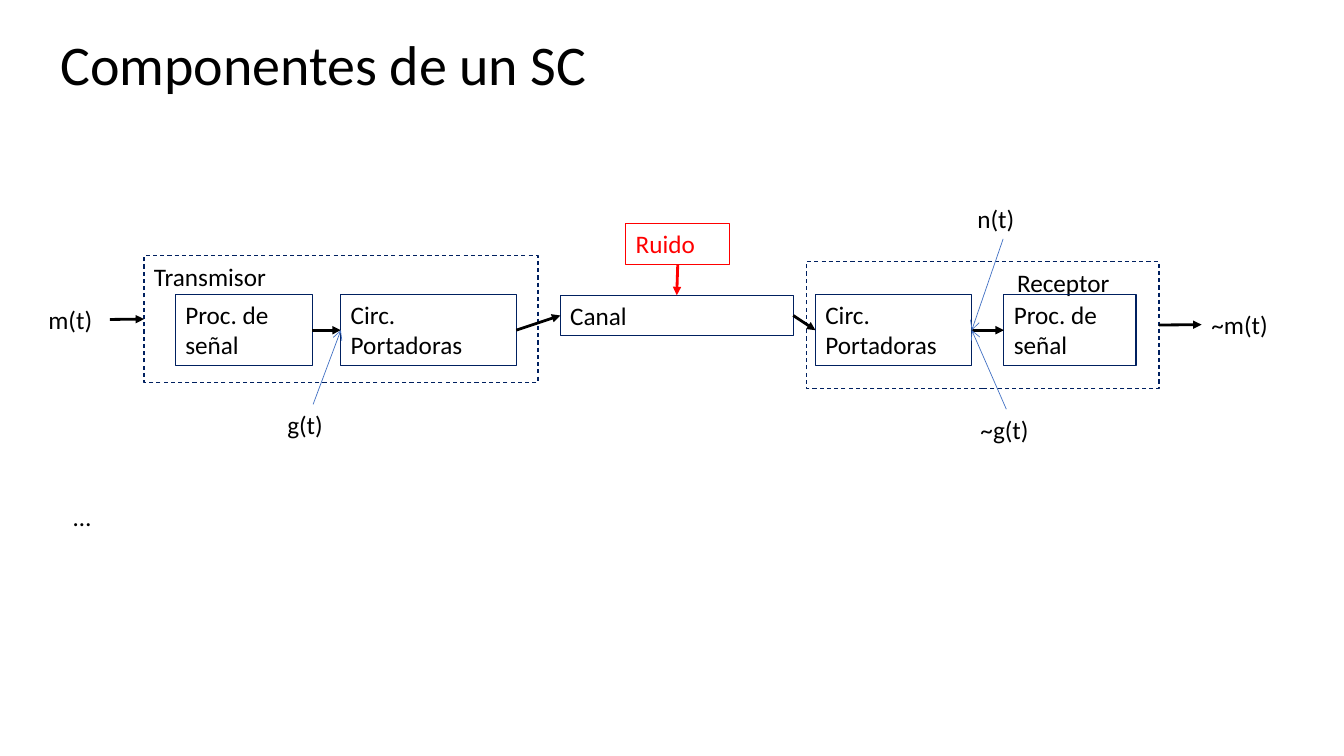
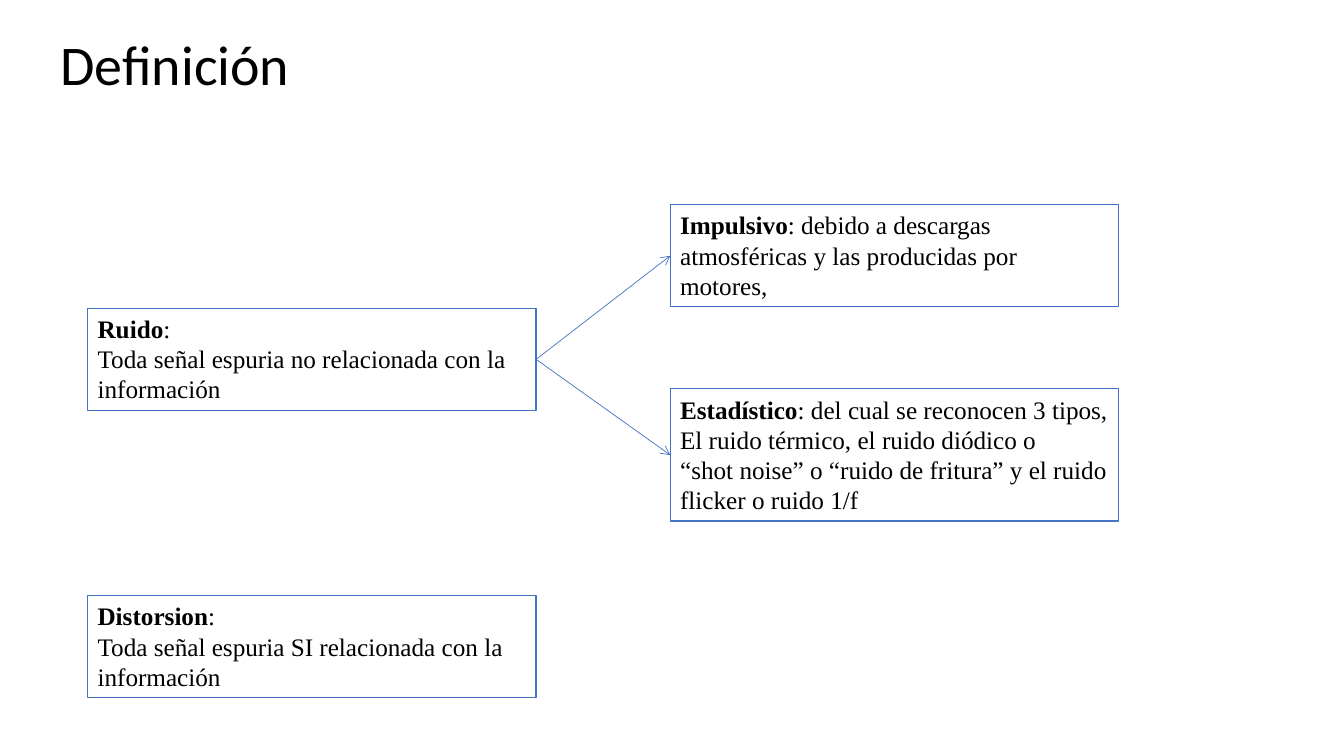
from dataclasses import dataclass

from lxml.etree import SubElement
from pptx import Presentation
from pptx.dml.color import RGBColor
from pptx.enum.dml import MSO_LINE
from pptx.enum.shapes import MSO_CONNECTOR, MSO_SHAPE
from pptx.enum.text import MSO_ANCHOR, MSO_AUTO_SIZE, PP_ALIGN
from pptx.oxml.ns import qn
from pptx.util import Cm, Pt

# Shared look
BLACK, NAVY, BLUE, RED = "000000", "002060", "4472C4", "FF0000"
SANS, SERIF = "Calibri", "Times New Roman"
TOP, LEFT, BOTTOM, RIGHT = range(4)
INSET = 0.25


@dataclass(frozen=True)
class Box:
    """A rectangle or, without a line colour, a plain label; lengths in cm."""
    left: float
    top: float
    width: float
    height: float
    text: str
    lead: str = ""
    line: str | None = NAVY
    color: str = BLACK
    font: str = SANS
    dashed: bool = False
    align: PP_ALIGN = PP_ALIGN.LEFT
    right_inset: float = INSET


@dataclass(frozen=True)
class Arrow:
    start: str
    start_side: int
    end: str
    end_side: int
    color: str = BLACK
    width: float = 2
    head: str = "triangle"


def rgb(value: str) -> RGBColor:
    return RGBColor.from_string(value)


def write_text(shape, text: str, *, lead: str = "", font: str = SANS, size: float = 18,
               color: str = BLACK, align: PP_ALIGN = PP_ALIGN.LEFT,
               anchor: MSO_ANCHOR = MSO_ANCHOR.TOP, right_inset: float = INSET) -> None:
    """Write one paragraph per line of text, the first opened by a bold lead."""
    frame = shape.text_frame
    frame.word_wrap = True
    frame.auto_size = MSO_AUTO_SIZE.NONE
    frame.vertical_anchor = anchor
    frame.margin_right = Cm(right_inset)
    for index, line in enumerate(text.split("\n")):
        paragraph = frame.add_paragraph() if index else frame.paragraphs[0]
        paragraph.alignment = align
        runs = [(line, False)]
        if lead and index == 0:
            runs.insert(0, (lead, True))
        for content, bold in runs:
            run = paragraph.add_run()
            run.text = content
            run.font.name = font
            run.font.size = Pt(size)
            run.font.bold = bold
            run.font.color.rgb = rgb(color)


def add_box(slide, box: Box):
    place = [Cm(value) for value in (box.left, box.top, box.width, box.height)]
    if box.line:
        shape = slide.shapes.add_shape(MSO_SHAPE.RECTANGLE, *place)
        shape.shadow.inherit = False
        shape.fill.background()
        shape.line.color.rgb = rgb(box.line)
        shape.line.width = Pt(0.75)
        if box.dashed:
            shape.line.dash_style = MSO_LINE.DASH
    else:
        shape = slide.shapes.add_textbox(*place)
    write_text(shape, box.text, lead=box.lead, font=box.font, color=box.color,
               align=box.align, right_inset=box.right_inset)
    return shape


def add_arrow(slide, shapes: dict, arrow: Arrow) -> None:
    connector = slide.shapes.add_connector(MSO_CONNECTOR.STRAIGHT, 0, 0, 0, 0)
    connector.begin_connect(shapes[arrow.start], arrow.start_side)
    connector.end_connect(shapes[arrow.end], arrow.end_side)
    connector.line.color.rgb = rgb(arrow.color)
    connector.line.width = Pt(arrow.width)
    properties = connector._element.spPr
    SubElement(properties.find(qn("a:ln")), qn("a:tailEnd"), type=arrow.head)
    SubElement(properties, qn("a:effectLst"))


def add_diagram_slide(presentation, title: str, boxes: dict[str, Box],
                      arrows: list[Arrow]) -> None:
    slide = presentation.slides.add_slide(presentation.slide_layouts[5])
    heading = slide.shapes.title
    heading.left, heading.top = Cm(1.27), Cm(0.61)
    heading.width, heading.height = Cm(30.68), Cm(1.96)
    write_text(heading, title, size=40)
    shapes = {name: add_box(slide, box) for name, box in boxes.items()}
    for arrow in arrows:
        add_arrow(slide, shapes, arrow)


def label(left: float, top: float, text: str, width: float = 1.8) -> Box:
    return Box(left, top, width, 1.02, text, line=None)


def stage(left: float, width: float, text: str) -> Box:
    return Box(left, 7.42, width, 1.8, text)


def definition(left: float, top: float, height: float, lead: str, text: str) -> Box:
    return Box(left, top, 11.3, height, text, lead=lead, line=BLUE, font=SERIF)


def thin_arrow(start: str, start_side: int, end: str, end_side: int) -> Arrow:
    return Arrow(start, start_side, end, end_side, BLUE, 0.5, "arrow")


# Slide 1: block diagram of a communication system
SYSTEM_BOXES = {
    "receiver": Box(20.32, 6.6, 8.89, 3.18, "Receptor", dashed=True,
                    align=PP_ALIGN.RIGHT, right_inset=1.25),
    "transmitter": Box(3.63, 6.45, 9.93, 3.18, "Transmisor", dashed=True),
    "input processing": stage(4.42, 3.45, "Proc. de señal"),
    "input carrier": stage(8.59, 4.42, "Circ. Portadoras"),
    "channel": Box(14.12, 7.44, 5.87, 1.02, "Canal"),
    "noise": Box(15.77, 5.64, 2.62, 1.02, "Ruido", line=RED, color=RED),
    "output carrier": stage(20.55, 3.94, "Circ. Portadoras"),
    "output processing": stage(25.3, 3.33, "Proc. de señal"),
    "m": label(0.97, 7.54, "m(t)"),
    "received m": label(30.28, 7.67, "~m(t)", 2.39),
    "g": label(6.99, 10.19, "g(t)"),
    "received g": label(24.46, 10.31, "~g(t)"),
    "n": label(24.38, 5, "n(t)"),
    "ellipsis": label(1.6, 12.5, "…", 30.68),
}
SYSTEM_ARROWS = [
    Arrow("m", RIGHT, "transmitter", LEFT),
    Arrow("input processing", RIGHT, "input carrier", LEFT),
    Arrow("input carrier", RIGHT, "channel", LEFT),
    Arrow("noise", BOTTOM, "channel", TOP, color=RED),
    Arrow("channel", RIGHT, "output carrier", LEFT),
    Arrow("output carrier", RIGHT, "output processing", LEFT),
    Arrow("receiver", RIGHT, "received m", LEFT),
    thin_arrow("g", TOP, "input carrier", LEFT),
    thin_arrow("received g", TOP, "output carrier", RIGHT),
    thin_arrow("n", BOTTOM, "output carrier", RIGHT),
]

# Slide 2: noise, its two kinds, and distortion
DEFINITION_BOXES = {
    "noise": definition(2.21, 7.77, 2.57, "Ruido",
                        ":\nToda señal espuria no relacionada con la información"),
    "statistical": definition(
        16.89, 9.8, 3.33, "Estadístico",
        ": del cual se reconocen 3 tipos, El ruido térmico, el ruido diódico o\n"
        "“shot noise” o “ruido de fritura” y el ruido flicker o ruido 1/f"),
    "impulsive": definition(
        16.89, 5.16, 2.57, "Impulsivo",
        ": debido a descargas atmosféricas y las producidas por motores,"),
    "distortion": definition(2.21, 15.01, 2.57, "Distorsion",
                             ":\nToda señal espuria SI relacionada con la información"),
}
DEFINITION_ARROWS = [thin_arrow("noise", RIGHT, kind, LEFT)
                     for kind in ("impulsive", "statistical")]


def main() -> None:
    presentation = Presentation()
    presentation.slide_width, presentation.slide_height = Cm(33.87), Cm(19.05)
    add_diagram_slide(presentation, "Componentes de un SC", SYSTEM_BOXES, SYSTEM_ARROWS)
    add_diagram_slide(presentation, "Definición", DEFINITION_BOXES, DEFINITION_ARROWS)
    presentation.save("out.pptx")


if __name__ == "__main__":
    main()
